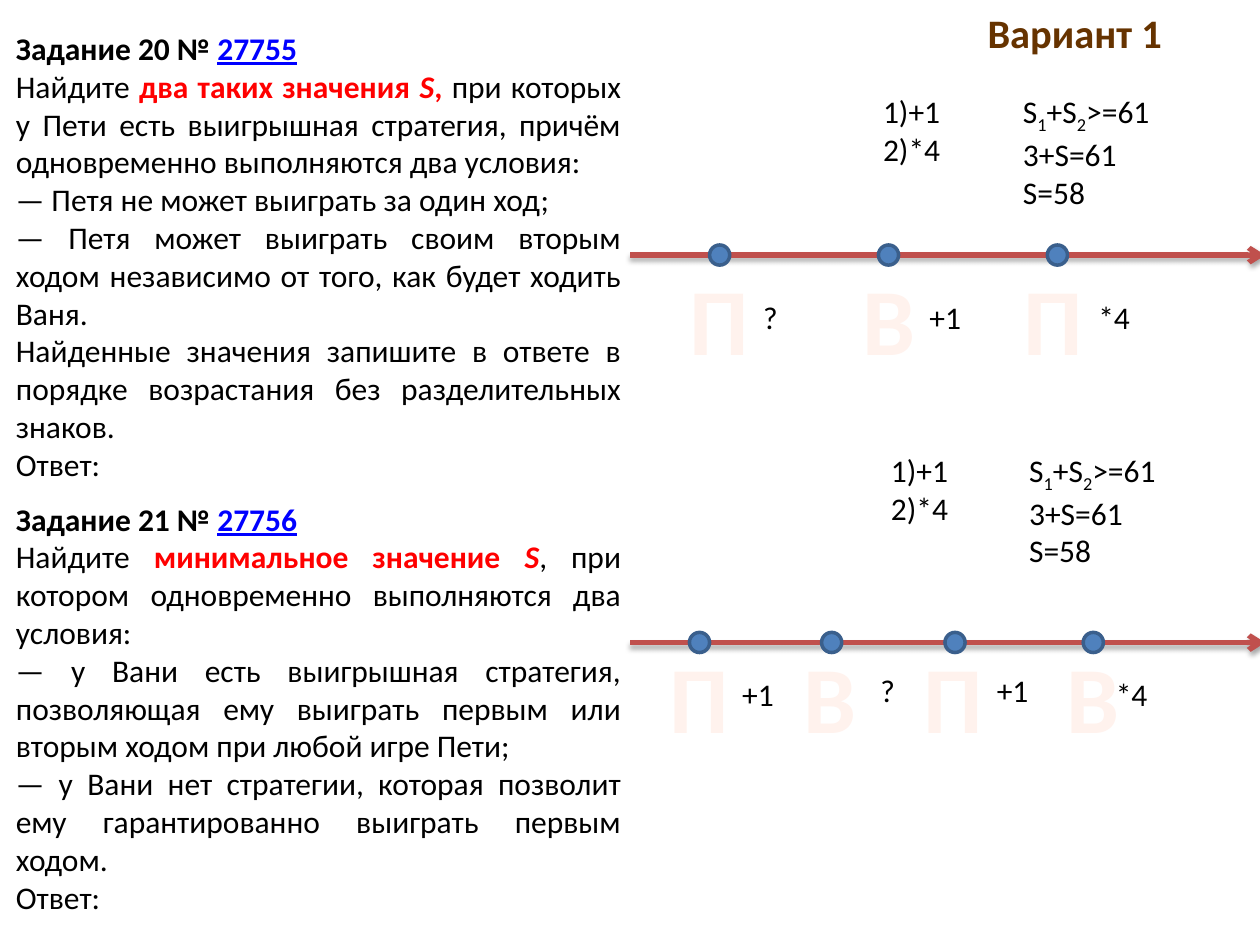
from lxml.etree import SubElement as Sub
from pptx import Presentation
from pptx.dml.color import RGBColor as RGB
from pptx.enum.shapes import MSO_CONNECTOR as Conn, MSO_SHAPE as Kind
from pptx.enum.text import MSO_AUTO_SIZE as Fit, PP_ALIGN as Al
from pptx.oxml.ns import qn
from pptx.util import Pt

THEME = {
    "axis": RGB.from_string("C0504D"),
    "dot": RGB.from_string("4F81BD"),
    "rim": RGB.from_string("3A5F8C"),
    "body": {"name": "Calibri", "size": Pt(18), "color": "000000"},
    "bold": {"bold": True},
    "num": {"bold": True, "underline": True, "color": "0000FF"},
    "key": {"bold": True, "color": "FF0000"},
    "var": {"bold": True, "italic": True, "color": "FF0000"},
    "title": {"size": Pt(23.1), "bold": True, "color": "663300"},
    "turn": {"size": Pt(54), "bold": True, "color": "FFF2ED"},
    "sub": {},
}

deck = Presentation()
deck.slide_width, deck.slide_height = Pt(720), Pt(540)
slide = deck.slides.add_slide(deck.slide_layouts[6])
shapes = slide.shapes


def put(box, lines, align=Al.LEFT, wrap=True):
    """Add a text box; each line is a list of (text, style name) runs."""
    frame = shapes.add_textbox(*map(Pt, box)).text_frame
    frame.word_wrap = wrap
    frame.auto_size = Fit.SHAPE_TO_FIT_TEXT
    for i, line in enumerate(lines):
        para = frame.add_paragraph() if i else frame.paragraphs[0]
        para.alignment = align
        for text, style in line:
            run = para.add_run()
            run.text = text
            for key, value in (THEME["body"] | THEME[style]).items():
                if key == "color":
                    run.font.color.rgb = RGB.from_string(value)
                else:
                    setattr(run.font, key, value)
            if style == "sub":
                run._r.get_or_add_rPr().set("baseline", "-25000")
    return frame


def plain(*texts):
    return [[(text, "body")] for text in texts]


# Tasks
first = [
    [("Задание 20 № ", "bold"), ("27755", "num")],
    [("Найдите ", "body"), ("два таких значения ", "key"), ("S", "var"), (", ", "key"),
     ("при которых у Пети есть выигрышная стратегия, причём одновременно "
      "выполняются два условия:", "body")],
    *plain(
        "— Петя не может выиграть за один ход;",
        "— Петя может выиграть своим вторым ходом независимо от того, "
        "как будет ходить Ваня.",
        "Найденные значения запишите в ответе в порядке возрастания "
        "без разделительных знаков.",
        "Ответ: "),
]
second = [
    [("Задание 21 № ", "bold"), ("27756", "num")],
    [("Найдите ", "body"), ("минимальное значение ", "key"), ("S", "var"),
     (", при котором одновременно выполняются два условия:", "body")],
    *plain(
        "— у Вани есть выигрышная стратегия, позволяющая ему выиграть "
        "первым или вторым ходом при любой игре Пети;",
        "— у Вани нет стратегии, которая позволит ему гарантированно "
        "выиграть первым ходом.",
        "Ответ: "),
]
tasks = put((2, 13, 360, 518), first + second, Al.JUSTIFY)
tasks.paragraphs[len(first)].space_before = Pt(9.8)

put((513.5, 1, 201.5, 32), [[("Вариант 1", "title")]], Al.CENTER)

# Game lines: axis height, dots, turns (letter, left), moves (text, left, top)
games = [
    (145.8, (405.5, 502, 598.5),
     (("П", 386.5), ("В", 485.5), ("П", 577.5)),
     (("?", 429, 167), ("+1", 524, 167), ("*4", 620.5, 167))),
    (367.2, (394, 469.5, 540, 619),
     (("П", 375), ("В", 452), ("П", 520), ("В", 602)),
     (("+1", 417, 382), ("?", 496, 380), ("+1", 562.5, 380), ("*4", 630.5, 382))),
]
for y, dots, turns, moves in games:
    axis = shapes.add_connector(Conn.STRAIGHT, Pt(360), Pt(y), Pt(723), Pt(y))
    axis.line.color.rgb = THEME["axis"]
    axis.line.width = Pt(3)
    Sub(axis.line._get_or_add_ln(), qn("a:tailEnd"), type="arrow")
    glow = Sub(axis._element.spPr, qn("a:effectLst"))
    shade = Sub(glow, qn("a:outerShdw"), blurRad=str(Pt(3.1)), dist=str(Pt(1.8)),
                dir="5400000", rotWithShape="0")
    black = Sub(shade, qn("a:srgbClr"), val="000000")
    Sub(black, qn("a:alpha"), val="35000")

    for x in dots:
        dot = shapes.add_shape(Kind.OVAL, Pt(x), Pt(y - 5.8), Pt(11.5), Pt(11.5))
        dot.shadow.inherit = False
        dot.fill.solid()
        dot.fill.fore_color.rgb = THEME["dot"]
        dot.line.color.rgb = THEME["rim"]
        dot.line.width = Pt(2)

    top = 145.5 if y < 200 else 361.5
    for name, x in turns:
        wide = 49 if name == "П" else 45
        put((x, top, wide, 72.7), [[(name, "turn")]], Al.CENTER, False)
    for text, x, up in moves:
        put((x, up, 39.5, 29), plain(text))

# Rules and sums
total = [("S", "body"), ("1", "sub"), ("+S", "body"), ("2", "sub"), (">=61", "body")]
for left, mid, top in ((497.5, 577.5, 49), (502, 581, 254)):
    put((left, top, 79, 51), plain("1)+1", "2)*4"))
    put((mid, top, 113, 73), [total, *plain("3+S=61", "S=58")])

deck.save("out.pptx")
